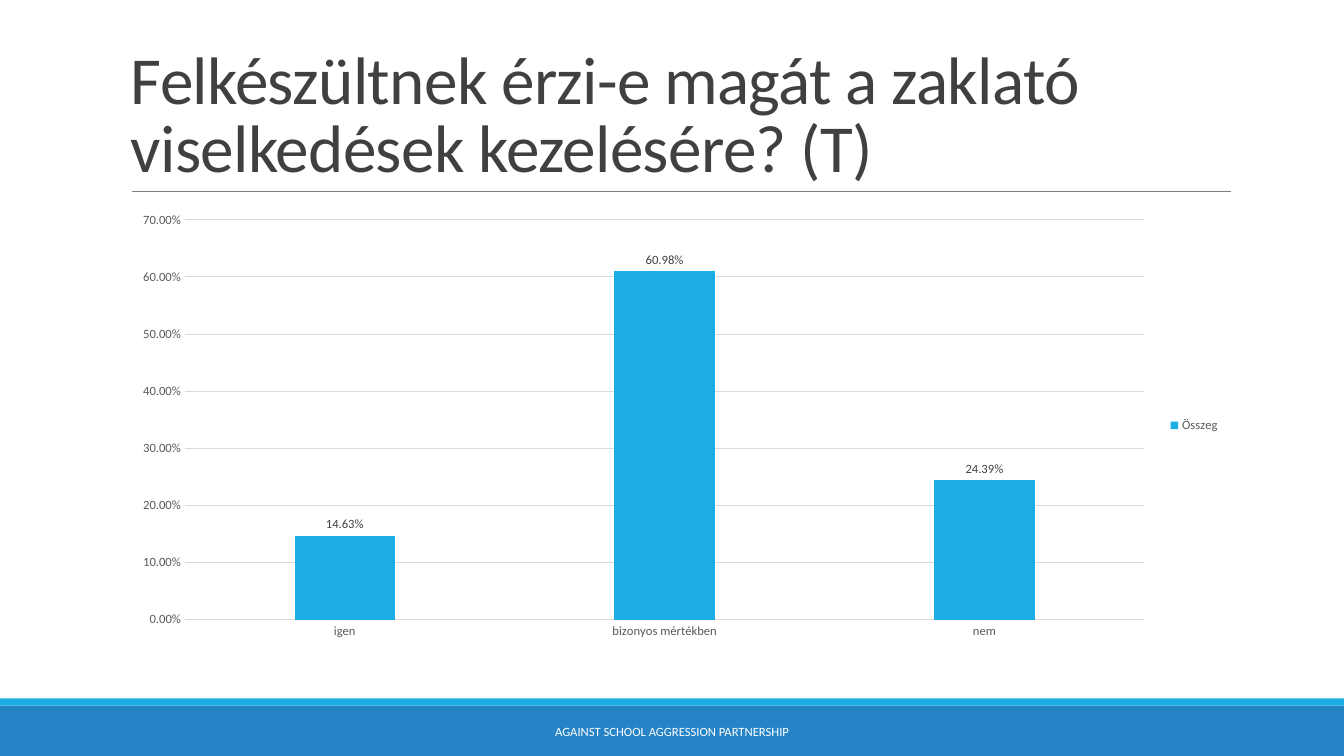
from pptx import Presentation
from pptx.chart.data import CategoryChartData as Data
from pptx.dml.color import RGBColor as Rgb
from pptx.enum.chart import XL_CHART_TYPE as Kind
from pptx.enum.chart import XL_LABEL_POSITION as Spot
from pptx.enum.chart import XL_LEGEND_POSITION as Side
from pptx.enum.chart import XL_TICK_MARK as Tick
from pptx.enum.shapes import MSO_CONNECTOR as Link
from pptx.enum.shapes import MSO_SHAPE as Shape
from pptx.enum.text import MSO_ANCHOR as Anchor
from pptx.enum.text import PP_ALIGN as Align
from pptx.oxml.ns import qn
from pptx.util import Inches, Pt
from lxml.etree import SubElement as Sub

COLORS = {
    "blue": "2683C6",
    "cyan": "1CADE4",
    "rule": "808080",
    "grid": "D9D9D9",
    "dark": "404040",
    "gray": "595959",
    "black": "000000",
    "white": "FFFFFF",
}


class Deck:
    face = "Calibri"
    rate = "0.00%"

    def __init__(self, wide, high):
        self.show = Presentation()
        self.show.slide_width = Inches(wide)
        self.show.slide_height = Inches(high)
        self.slide = self.show.slides.add_slide(self.show.slide_layouts[6])
        self.shapes = self.slide.shapes

    def color(self, name):
        return Rgb.from_string(COLORS[name])

    def style(self, font, size, tone):
        font.name = self.face
        font.size = Pt(size)
        font.color.rgb = self.color(tone)

    def stroke(self, line, tone, width):
        line.color.rgb = self.color(tone)
        line.width = Pt(width)

    def band(self, box, tone):
        bar = self.shapes.add_shape(Shape.RECTANGLE, *map(Inches, box))
        bar.shadow.inherit = False
        bar.fill.solid()
        bar.fill.fore_color.rgb = self.color(tone)
        bar.line.fill.background()

    def line(self, ends, tone, width):
        rule = self.shapes.add_connector(Link.STRAIGHT, *map(Inches, ends))
        self.stroke(rule.line, tone, width)
        Sub(rule._element.spPr, qn("a:effectLst"))

    def text(self, box, words, size, tone, anchor, align, lead=1, gap=0):
        frame = self.shapes.add_textbox(*map(Inches, box)).text_frame
        frame.word_wrap = True
        frame.vertical_anchor = anchor
        para = frame.paragraphs[0]
        para.alignment = align
        para.line_spacing = lead
        run = para.add_run()
        run.text = words
        self.style(run.font, size, tone)
        if gap:
            run.font._element.set("spc", str(gap))

    def chart(self, box, name, cats, vals):
        data = Data(number_format=self.rate)
        data.categories = cats
        data.add_series(name, vals)
        chart = self.shapes.add_chart(
            Kind.COLUMN_CLUSTERED, *map(Inches, box), data).chart
        self.style(chart.font, 10, "black")
        chart.has_title = False
        chart.has_legend = True
        chart.legend.position = Side.RIGHT
        chart.legend.include_in_layout = False
        self.style(chart.legend.font, 9, "gray")

        for axis in (chart.category_axis, chart.value_axis):
            axis.major_tick_mark = axis.minor_tick_mark = Tick.NONE
            self.style(axis.tick_labels.font, 9, "gray")
        self.stroke(chart.category_axis.format.line, "grid", 0.75)
        scale = chart.value_axis
        scale.format.line.fill.background()
        scale.minimum_scale, scale.maximum_scale = 0, 0.7
        scale.major_unit = 0.1
        scale.has_major_gridlines = True
        self.stroke(scale.major_gridlines.format.line, "grid", 0.75)
        scale.tick_labels.number_format = self.rate
        scale.tick_labels.number_format_is_linked = False

        plot = chart.plots[0]
        plot.vary_by_categories = False
        plot.gap_width, plot.overlap = 219, -27
        bars = plot.series[0]
        bars.format.fill.solid()
        bars.format.fill.fore_color.rgb = self.color("cyan")
        marks = bars.data_labels
        marks.show_value = True
        marks.position = Spot.OUTSIDE_END
        marks.number_format = self.rate
        marks.number_format_is_linked = False
        self.style(marks.font, 9, "dark")


def main():
    deck = Deck(13.33, 7.5)
    deck.band((0, 7, 13.33, 0.5), "blue")
    deck.band((0, 6.93, 13.33, 0.07), "cyan")
    deck.line((1.31, 1.9, 12.21, 1.9), "rule", 0.5)
    deck.text((1.2, 0.31, 11, 1.59),
              "Felkészültnek érzi-e magát a zaklató viselkedések kezelésére? (T)",
              48, "dark", Anchor.BOTTOM, Align.LEFT, lead=0.85, gap=-50)
    deck.text((4.03, 7.06, 5.27, 0.4), "AGAINST SCHOOL AGGRESSION PARTNERSHIP",
              9, "white", Anchor.MIDDLE, Align.CENTER)
    deck.chart((1.2, 2.02, 11, 4.4), "Összeg",
               ("igen", "bizonyos mértékben", "nem"),
               (0.1463, 0.6098, 0.2439))
    deck.show.save("out.pptx")


if __name__ == "__main__":
    main()
